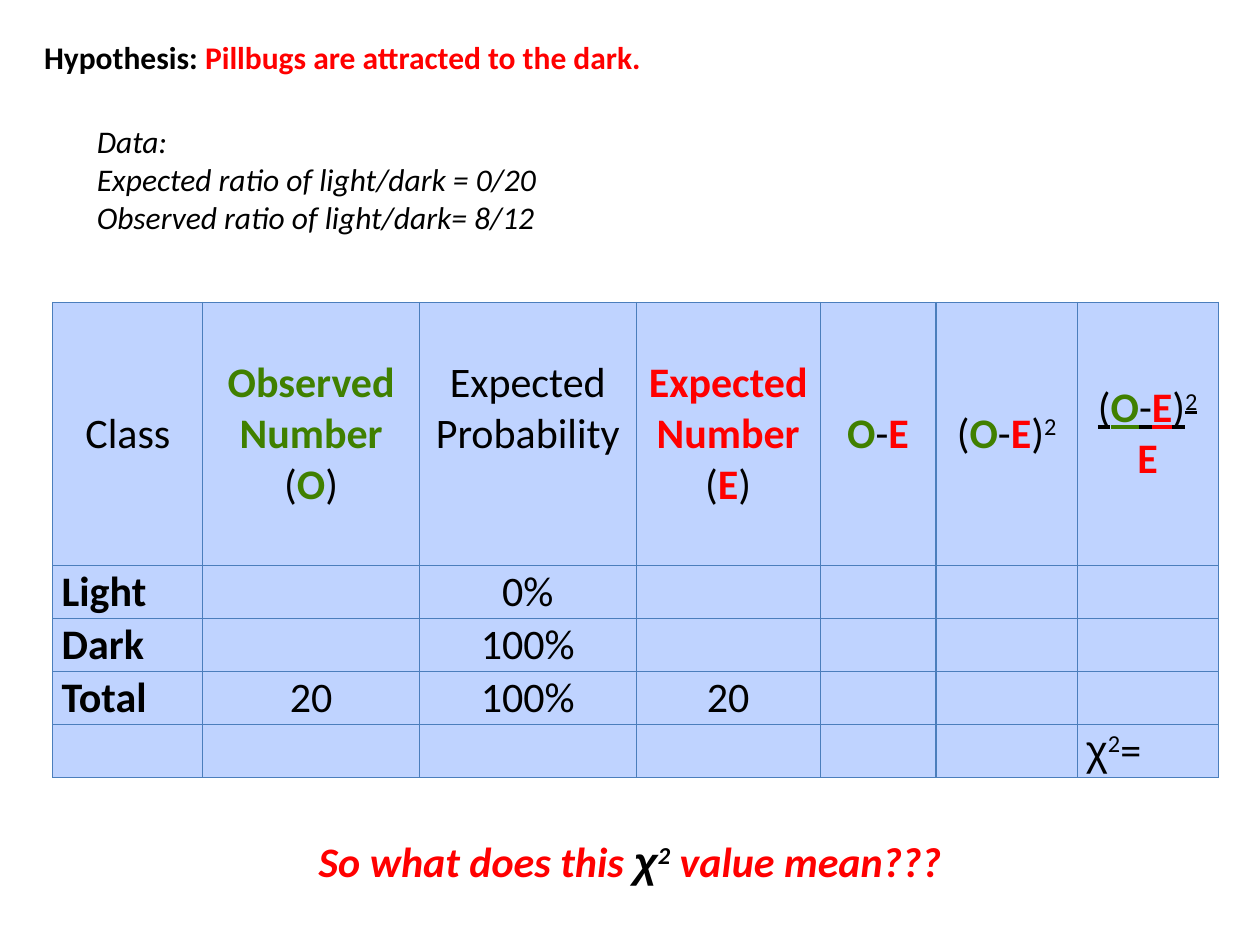
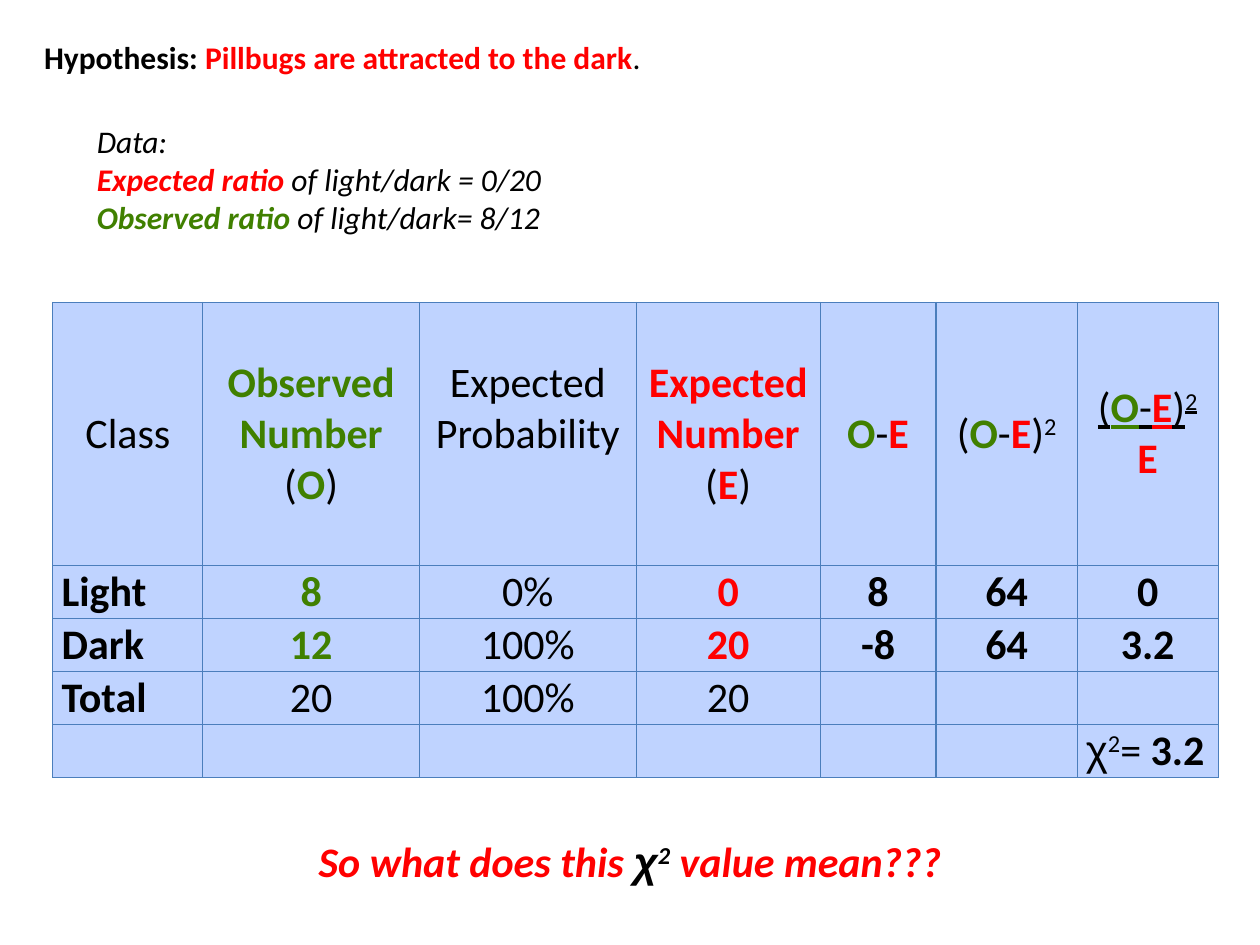
from pptx import Presentation
from pptx.dml.color import RGBColor
from pptx.enum.text import MSO_ANCHOR as Anchor, MSO_AUTO_SIZE as AutoSize, PP_ALIGN as Align
from pptx.util import Inches, Pt
from lxml import etree

# Shared look
BLACK, RED, GREEN = "000000", "FF0000", "408000"
CELL_FILL, GRID = "BFD3FF", "4B7EBC"
BODY_FONT, SYMBOL_FONT = "Calibri", "Arial"
NS = "http://schemas.openxmlformats.org/drawingml/2006/main"

# Text is a list of paragraphs, a paragraph a list of (text, style) runs.
# Style letters: r red, g green, b bold, i italic, u underline,
# ^ superscript, x symbol font
O, E, MINUS = ("O", "gb"), ("E", "rb"), ("-", "")
SQUARE = [("(", ""), O, MINUS, E, (")", ""), ("2", "^")]
CHI = [("χ", "x"), ("2", "^")]

HEADER = [
    [[("Class", "")]],
    [[("Observed Number ", "gb"), ("(", ""), O, (")", "")]],
    [[("Expected Probability", "")]],
    [[("Expected Number", "rb")], [("(", ""), E, (")", "")]],
    [[O, MINUS, E]],
    [SQUARE],
    [[(text, style + "u") for text, style in SQUARE], [E]],
]
CLASSES = ["Light", "Dark", "Total"]
PROBABILITIES = ["0%", "100%", "100%"]
COL_STYLES = ["b", "gb", "", "rb", "b", "b", "b"]
COL_WIDTHS = [1.19, 1.72, 1.72, 1.46, 0.92, 1.12, 1.12]
ROW_HEIGHTS = [2.09] + [0.42] * 4
QUESTION = [[("So what does this ", "rbi"), ("χ", "bix"), ("2", "bi^"),
             (" value mean???", "rbi")]]

# Observed, expected, O-E, squared and divided values for Light and Dark
SLIDES = [
    {
        "hypothesis": [[("Hypothesis: ", "b"),
                        ("Pillbugs are attracted to the dark.", "rb")]],
        "data": [[("Data:", "i")],
                 [("Expected ratio of light/dark = 0/20", "i")],
                 [("Observed ratio of light/dark= 8/12", "i")]],
        "values": [[""] * 5, [""] * 5],
        "chi": CHI + [("=", "")],
    },
    {
        "hypothesis": [[("Hypothesis: ", "b"),
                        ("Pillbugs are attracted to the dark", "rb"), (".", "")]],
        "data": [[("Data:", "i")],
                 [("Expected ratio ", "rbi"), ("of light/dark = 0/20", "i")],
                 [("Observed ratio ", "gbi"), ("of light/dark= 8/12", "i")]],
        "values": [["8", "0", "8", "64", "0"], ["12", "20", "-8", "64", "3.2"]],
        "chi": CHI + [("= ", ""), ("3.2", "b")],
    },
]


def rgb(color):
    return RGBColor.from_string(color)


def write(tf, paragraphs, size, align=Align.LEFT):
    for n, runs in enumerate(paragraphs):
        p = tf.add_paragraph() if n else tf.paragraphs[0]
        p.alignment = align
        for text, style in runs:
            r = p.add_run()
            r.text = text
            f = r.font
            f.size = Pt(size)
            f.name = SYMBOL_FONT if "x" in style else BODY_FONT
            f.bold, f.italic, f.underline = ("b" in style, "i" in style, "u" in style)
            f.color.rgb = rgb(RED if "r" in style else GREEN if "g" in style else BLACK)
            if "^" in style:
                f._element.set("baseline", "30000")


def place(sp, left, top, width, height):
    sp.left, sp.top, sp.width, sp.height = map(Inches, (left, top, width, height))
    tf = sp.text_frame
    tf.word_wrap = True
    tf.auto_size = AutoSize.NONE
    tf.vertical_anchor = Anchor.TOP
    return tf


def add_text(slide, box, paragraphs, size, align=Align.LEFT):
    sp = slide.shapes.add_textbox(0, 0, 0, 0)
    write(place(sp, *box), paragraphs, size, align)


def format_cell(cell):
    cell.margin_left = cell.margin_right = Inches(0.07)
    cell.margin_top = cell.margin_bottom = 0
    cell.vertical_anchor = Anchor.MIDDLE
    tc_pr = cell._tc.get_or_add_tcPr()
    for side in ("lnL", "lnR", "lnT", "lnB"):
        ln = etree.SubElement(tc_pr, f"{{{NS}}}{side}", w=str(Pt(0.75)))
        fill = etree.SubElement(ln, f"{{{NS}}}solidFill")
        etree.SubElement(fill, f"{{{NS}}}srgbClr", val=GRID)
    cell.fill.solid()
    cell.fill.fore_color.rgb = rgb(CELL_FILL)


def table_rows(values, chi):
    """Header, one row per class, then the chi-square row."""
    rows = [HEADER]
    for name, chance, results in zip(CLASSES[:2], PROBABILITIES, values):
        texts = [name, results[0], chance, *results[1:]]
        rows.append([[[(t, s)]] if t else None for t, s in zip(texts, COL_STYLES)])
    totals = [[[(t, "")]] for t in ("20", PROBABILITIES[2], "20")]
    rows.append([[[(CLASSES[2], "b")]], *totals] + [None] * 3)
    rows.append([None] * 6 + [[chi]])
    return rows


def add_chi_table(slide, values, chi):
    frame = slide.shapes.add_table(
        len(ROW_HEIGHTS), len(COL_WIDTHS), Inches(0.42), Inches(2.4),
        Inches(sum(COL_WIDTHS)), Inches(sum(ROW_HEIGHTS)))
    table = frame.table
    table.first_row = table.horz_banding = False
    for col, width in zip(table.columns, COL_WIDTHS):
        col.width = Inches(width)
    for row, height in zip(table.rows, ROW_HEIGHTS):
        row.height = Inches(height)
    for i, row in enumerate(table_rows(values, chi)):
        for j, content in enumerate(row):
            cell = table.cell(i, j)
            format_cell(cell)
            if content:
                left = i == len(ROW_HEIGHTS) - 1 or (i > 0 and j == 0)
                write(cell.text_frame, content, 24, Align.LEFT if left else Align.CENTER)
    # Lift the probability heading level with its three-line neighbours
    table.cell(0, 2).margin_bottom = Inches(0.4)


def main():
    prs = Presentation()
    prs.slide_width, prs.slide_height = Inches(10), Inches(7.5)
    title_only = prs.slide_layouts[5]
    for content in SLIDES:
        slide = prs.slides.add_slide(title_only)
        title = place(slide.shapes.title, 0.25, 0.25, 9.5, 0.4)
        write(title, content["hypothesis"], 18)
        add_chi_table(slide, content["values"], content["chi"])
        add_text(slide, (0.67, 0.92, 7.58, 1.01), content["data"], 18)
        add_text(slide, (0.5, 6.58, 9, 0.5), QUESTION, 24, Align.CENTER)
    prs.save("out.pptx")


if __name__ == "__main__":
    main()
